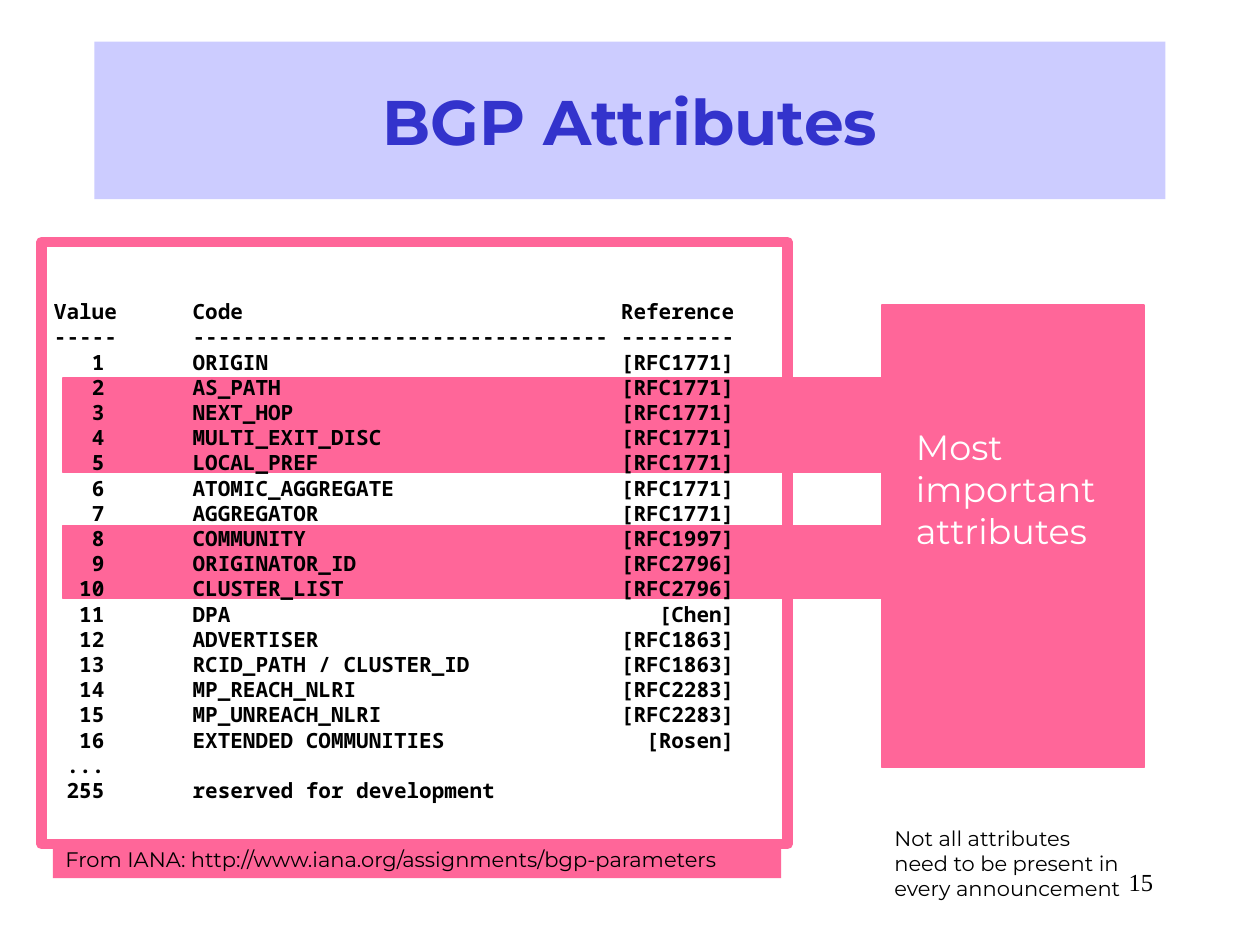
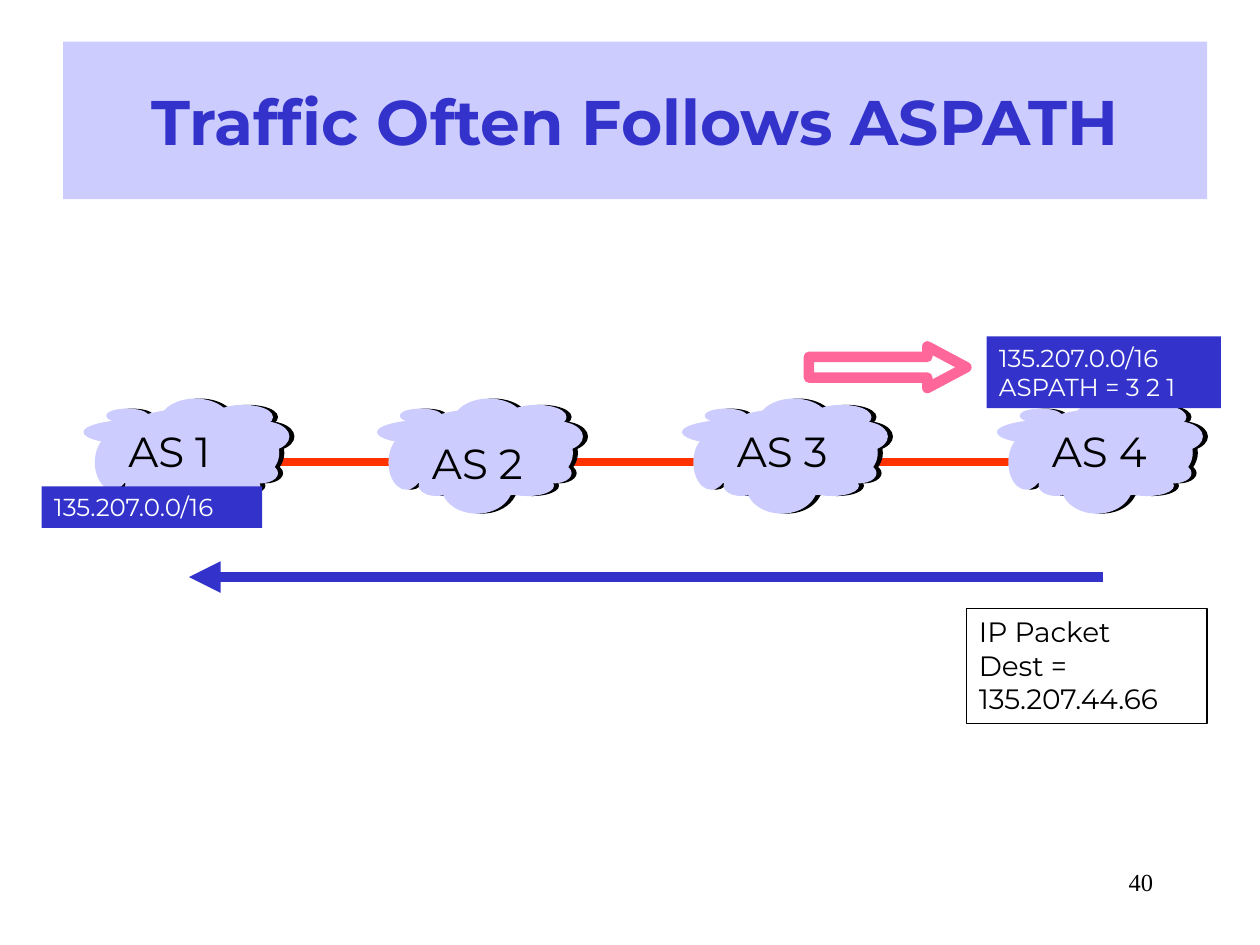
from pptx import Presentation
from pptx.dml.color import RGBColor
from pptx.enum.shapes import MSO_CONNECTOR, MSO_SHAPE
from pptx.enum.text import MSO_ANCHOR, PP_ALIGN
from pptx.oxml.ns import qn
from lxml.etree import SubElement

PX = 9144
PINK, PALE, BLUE, RED = "FF6699", "CCCCFF", "3333CC", "FF3300"
BLACK, WHITE = "000000", "FFFFFF"
SANS, MONO, SERIF = "Montserrat", "Noto Sans Mono", "Times New Roman"

STYLES = {
    "title": {"name": SANS, "size": 36, "bold": True, "color": BLUE},
    "page": {"name": SERIF, "size": 14, "color": BLACK},
    "code": {"name": MONO, "size": 12, "bold": True, "color": BLACK},
    "note": {"name": SANS, "size": 12, "color": BLACK},
    "claim": {"name": SANS, "size": 20, "color": WHITE},
    "cloud": {"name": SANS, "size": 24, "color": BLACK},
    "route": {"name": SANS, "size": 14, "color": WHITE},
    "packet": {"name": SANS, "size": 16, "color": BLACK},
}

HEADS = [
    ("Value", "Code", "Reference"),
    ("-" * 5, "-" * 33, "-" * 9),
]
CODES = [
    ("1", "ORIGIN", "[RFC1771]"),
    ("2", "AS_PATH", "[RFC1771]"),
    ("3", "NEXT_HOP", "[RFC1771]"),
    ("4", "MULTI_EXIT_DISC", "[RFC1771]"),
    ("5", "LOCAL_PREF", "[RFC1771]"),
    ("6", "ATOMIC_AGGREGATE", "[RFC1771]"),
    ("7", "AGGREGATOR", "[RFC1771]"),
    ("8", "COMMUNITY", "[RFC1997]"),
    ("9", "ORIGINATOR_ID", "[RFC2796]"),
    ("10", "CLUSTER_LIST", "[RFC2796]"),
    ("11", "DPA", "[Chen]"),
    ("12", "ADVERTISER", "[RFC1863]"),
    ("13", "RCID_PATH / CLUSTER_ID", "[RFC1863]"),
    ("14", "MP_REACH_NLRI", "[RFC2283]"),
    ("15", "MP_UNREACH_NLRI", "[RFC2283]"),
    ("16", "EXTENDED COMMUNITIES", "[Rosen]"),
    ("...",),
    ("255", "reserved for development"),
]
HEAD_TABS = [(110, "l"), (540, "r")]
CODE_TABS = [(40, "r")] + HEAD_TABS
BANDS = [(50, 417, 658, 58), (50, 300, 658, 75)]
SOURCE = "From IANA: http://www.iana.org/assignments/bgp-parameters"
CLAIM = "Most important attributes"
NOTE = ["Not all attributes", "need to be present in", "every announcement"]

CLOUDS = [
    ("AS 4", 792, 825, 333),
    ("AS 3", 542, 575, 333),
    ("AS 2", 300, 333, 342),
    ("AS 1", 67, 92, 333),
]
PUFFS = [
    (14, 325, 140, 69), (18, 325, 32, 10), (103, 322, 46, 18),
    (60, 317, 56, 37), (0, 333, 102, 20), (51, 365, 55, 42),
    (121, 335, 41, 23), (9, 346, 27, 42), (126, 368, 27, 15),
    (33, 378, 27, 15), (98, 378, 41, 15),
]
LAYERS = [(4, BLACK), (0, PALE)]
ROUTES = [
    ((33, 386, 175, 33), ["135.207.0.0/16"]),
    ((783, 267, 186, 57), ["135.207.0.0/16", "ASPATH = 3 2 1"]),
]
PACKET = ["IP Packet", "Dest =", "135.207.44.66"]


def tint(code):
    return RGBColor.from_string(code)


def scale(nums):
    return [round(num * PX) for num in nums]


def box(shapes, at, fill=None, line=None, width=0.75, kind=MSO_SHAPE.RECTANGLE):
    shape = shapes.add_shape(kind, *scale(at))
    shape.shadow.inherit = False
    if fill:
        shape.fill.solid()
        shape.fill.fore_color.rgb = tint(fill)
    else:
        shape.fill.background()
    if line:
        shape.line.color.rgb = tint(line)
        shape.line.width = round(width * 12700)
    else:
        shape.line.fill.background()
    return shape


def write(shape, lines, style, align=PP_ALIGN.LEFT, anchor=MSO_ANCHOR.TOP):
    frame = shape.text_frame
    frame.word_wrap = True
    frame.vertical_anchor = anchor
    for num, line in enumerate(lines):
        para = frame.add_paragraph() if num else frame.paragraphs[0]
        para.alignment = align
        run = para.add_run()
        run.text = line
        for key, value in STYLES[style].items():
            if key == "color":
                run.font.color.rgb = tint(value)
            else:
                setattr(run.font, key, value * 12700 if key == "size" else value)
    return frame


def label(slide, at, lines, style, align=PP_ALIGN.LEFT):
    write(slide.shapes.add_textbox(*scale(at)), lines, style, align)


def set_tabs(para, stops):
    tabs = SubElement(para._p.get_or_add_pPr(), qn("a:tabLst"))
    for pos, side in stops:
        SubElement(tabs, qn("a:tab"), pos=str(pos * PX), algn=side)


def rule(slide, ends, color, width, arrow=False):
    line = slide.shapes.add_connector(MSO_CONNECTOR.STRAIGHT, *scale(ends))
    line.line.color.rgb = tint(color)
    line.line.width = round(width * 12700)
    if arrow:
        SubElement(line.line._get_or_add_ln(), qn("a:tailEnd"), type="triangle")
    SubElement(line._element.spPr, qn("a:effectLst"))


def start(deck, page):
    slide = deck.slides.add_slide(deck.slide_layouts[6])
    label(slide, (717, 683, 208, 50), [page], "page", PP_ALIGN.RIGHT)
    return slide


def title(slide, left, width, text):
    shape = box(slide.shapes, (left, 33, width, 125), PALE)
    write(shape, [text], "title", PP_ALIGN.CENTER, MSO_ANCHOR.MIDDLE)


def draw_codes(deck):
    slide = start(deck, "15")
    for at in BANDS:
        box(slide.shapes, at, PINK, PINK)
    title(slide, 75, 850, "BGP Attributes")
    shape = box(slide.shapes, (33, 192, 592, 478), line=PINK, width=6)
    lines = ["\t".join(row) for row in HEADS]
    lines += ["\t" + "\t".join(row) for row in CODES]
    frame = write(shape, lines, "code")
    frame.margin_top = 45 * PX
    for num, para in enumerate(frame.paragraphs):
        set_tabs(para, HEAD_TABS if num < len(HEADS) else CODE_TABS)
    write(box(slide.shapes, (42, 667, 578, 30), PINK), [SOURCE], "note")
    box(slide.shapes, (700, 242, 208, 367), PINK, PINK)
    label(slide, (717, 333, 175, 110), [CLAIM], "claim")
    label(slide, (700, 650, 217, 70), NOTE, "note")


def draw_path(deck):
    slide = start(deck, "40")
    rule(slide, (100, 367, 925, 367), RED, 4.5)
    title(slide, 50, 908, "Traffic Often Follows ASPATH")
    for name, left, *spot in CLOUDS:
        group = slide.shapes.add_group_shape()
        for shift, color in LAYERS:
            for x, y, w, h in PUFFS:
                at = (left + x + shift, y, w, h)
                box(group.shapes, at, color, color, 1, MSO_SHAPE.OVAL)
    for name, left, x, y in CLOUDS:
        label(slide, (x, y, 103, 50), [name], "cloud")
    for at, lines in ROUTES:
        write(box(slide.shapes, at, BLUE), lines, "route")
    arrow = box(slide.shapes, (642, 275, 125, 33), None, PINK, 6, MSO_SHAPE.RIGHT_ARROW)
    arrow.adjustments[0] = 0.5
    arrow.adjustments[1] = 0.94
    rule(slide, (875, 458, 150, 458), BLUE, 6, True)
    write(box(slide.shapes, (767, 483, 191, 91), line=BLACK), PACKET, "packet")


def main():
    deck = Presentation()
    deck.slide_width, deck.slide_height = scale((1000, 750))
    draw_codes(deck)
    draw_path(deck)
    deck.save("out.pptx")


if __name__ == "__main__":
    main()
